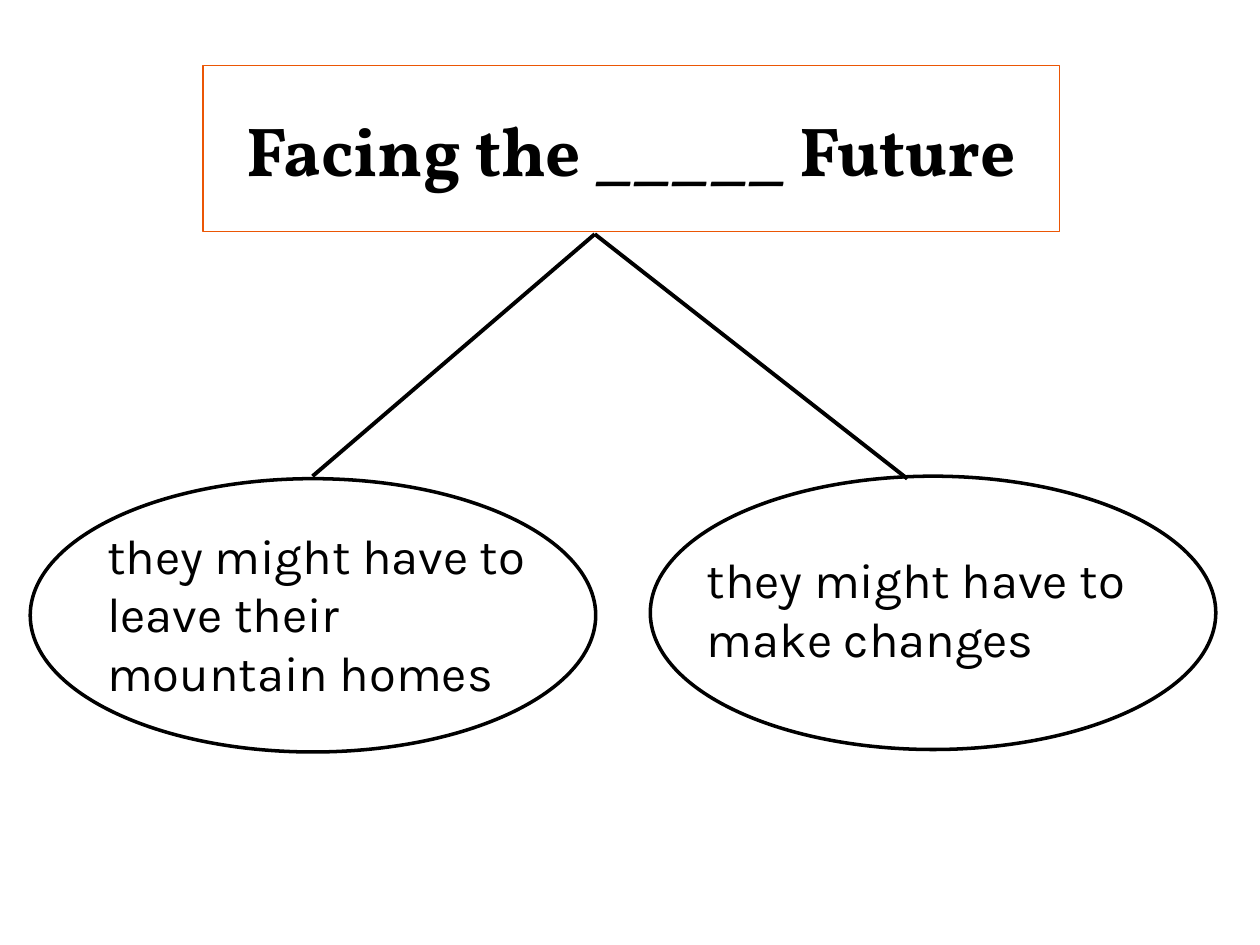
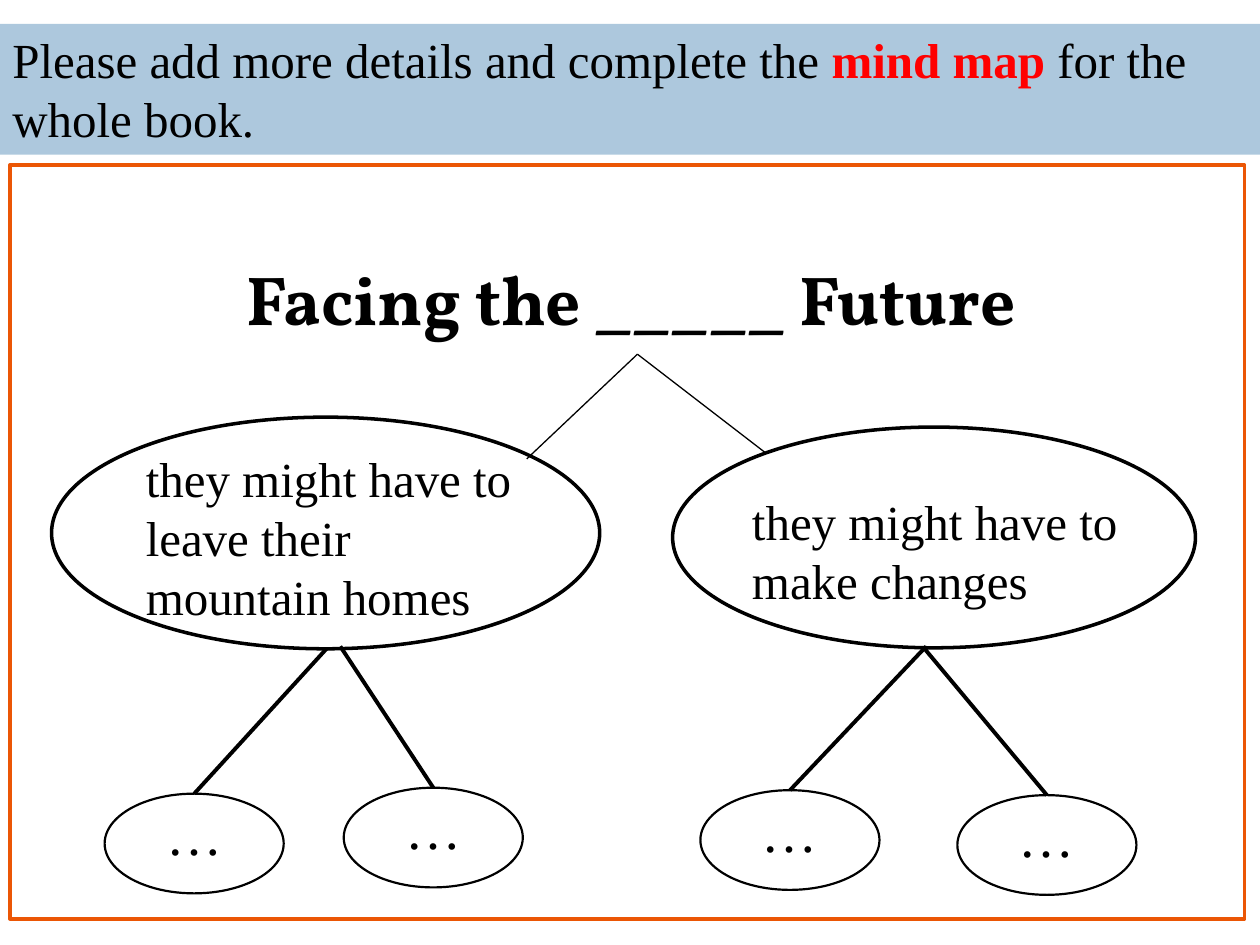
from pptx import Presentation
from pptx.dml.color import RGBColor
from pptx.enum.shapes import MSO_CONNECTOR, MSO_SHAPE
from pptx.enum.text import MSO_ANCHOR, MSO_AUTO_SIZE, PP_ALIGN
from pptx.oxml.ns import qn
from pptx.util import Cm, Pt
from lxml.etree import SubElement

# Shared look
BLACK, RED, ORANGE, BLUE = "000000", "FF0000", "EB5605", "ADC8DD"
SERIF, SANS, HEAD = "Times New Roman", "Karla", "Vollkorn"

# Content; all places are in cm
TITLE = "Facing the _____ Future"
IDEAS = ("they might have to leave their mountain homes",
         "they might have to make changes")
TASK = [("Please add more details and complete the ", BLACK, False),
        ("mind map ", RED, True),
        ("for the whole book.", BLACK, False)]

# Idea maps: oval boxes, text boxes, root point, line ends
FIRST = {
    "top": 1.32, "font": SANS, "line": 2.25, "root": (11.99, 4.72),
    "ovals": [(0.61, 9.65, 11.4, 5.51), (13.11, 9.6, 11.4, 5.51)],
    "texts": [(1.91, 10.46, 9.6, 3.84), (14, 10.95, 9.6, 2.64)],
    "ends": [(6.3, 9.6), (18.29, 9.65)],
}
SECOND = {
    "top": 4.32, "font": SERIF, "line": 0.75, "root": (12.85, 7.14),
    "ovals": [(1.04, 8.41, 11.05, 4.67), (13.56, 8.61, 10.54, 4.45)],
    "texts": [(2.69, 8.92, 8.53, 3.84), (14.91, 9.78, 9.6, 2.64)],
    "ends": [(10.62, 9.25), (15.42, 9.12)],
}

# Detail ovals: left, top and the start of the line that leads there
LEAVES = [(2.11, 16, (6.58, 13.08)), (6.93, 15.88, (6.86, 13.03)),
          (14.12, 15.93, (18.67, 13.03)), (19.3, 16.03, (18.64, 13.08))]
LEAF = (3.61, 2.01)
INDENT = 0.99


def tint(code):
    return RGBColor.from_string(code)


def style(run, font, size, color=BLACK, bold=False):
    run.font.name, run.font.size, run.font.bold = font, Pt(size), bold
    run.font.color.rgb = tint(color)


def shape(slide, kind, box, line=None, width=1, fill=None):
    item = slide.shapes.add_shape(kind, *map(Cm, box))
    item.shadow.inherit = False
    if fill:
        item.fill.solid()
        item.fill.fore_color.rgb = tint(fill)
    else:
        item.fill.background()
    if line:
        item.line.color.rgb = tint(line)
        item.line.width = Pt(width)
    else:
        item.line.fill.background()
    return item


def write(slide, box, text, font, size):
    frame = slide.shapes.add_textbox(*map(Cm, box)).text_frame
    frame.word_wrap = True
    frame.auto_size = MSO_AUTO_SIZE.SHAPE_TO_FIT_TEXT
    frame.text = text
    style(frame.paragraphs[0].runs[0], font, size)


def link(slide, start, end, width):
    line = slide.shapes.add_connector(
        MSO_CONNECTOR.STRAIGHT, *map(Cm, start + end))
    line.line.color.rgb = tint(BLACK)
    line.line.width = Pt(width)
    SubElement(line._element.spPr, qn("a:effectLst"))
    return line


def head(slide, top):
    title = slide.shapes.title
    title.left, title.top, title.width, title.height = map(
        Cm, (4.09, top, 17.27, 3.35))
    frame = title.text_frame
    frame.text = TITLE
    frame.auto_size = MSO_AUTO_SIZE.NONE
    frame.vertical_anchor = MSO_ANCHOR.MIDDLE
    frame.paragraphs[0].alignment = PP_ALIGN.CENTER
    style(frame.paragraphs[0].runs[0], HEAD, 39.6, bold=True)
    return title


def ideas(slide, plan):
    for end in plan["ends"]:
        link(slide, plan["root"], end, plan["line"])
    for oval in plan["ovals"]:
        shape(slide, MSO_SHAPE.OVAL, oval, BLACK, 2)
    for box, text in zip(plan["texts"], IDEAS):
        write(slide, box, text, plan["font"], 28)


def task(slide):
    band = shape(slide, MSO_SHAPE.RECTANGLE, (0, 0.48, 25.4, 2.64), fill=BLUE)
    frame = band.text_frame
    frame.word_wrap = True
    frame.auto_size = MSO_AUTO_SIZE.SHAPE_TO_FIT_TEXT
    frame.vertical_anchor = MSO_ANCHOR.TOP
    line = frame.paragraphs[0]
    line.alignment = PP_ALIGN.LEFT
    for text, color, bold in TASK:
        run = line.add_run()
        run.text = text
        style(run, SERIF, 28, color, bold)


def leaves(slide):
    for left, top, start in LEAVES:
        oval = shape(slide, MSO_SHAPE.OVAL, (left, top) + LEAF, BLACK, 1.25)
        stem = link(slide, start, (left + LEAF[0] / 2, top), 2.25)
        stem.end_connect(oval, 0)
        write(slide, (left + INDENT, top, 3, 1.63), "…", SERIF, 32)


def main():
    deck = Presentation()
    deck.slide_width, deck.slide_height = Cm(25.4), Cm(19.05)
    layout = deck.slide_layouts.get_by_name("Title Only")

    # Slide 1: the two main ideas
    slide = deck.slides.add_slide(layout)
    title = head(slide, FIRST["top"])
    title.line.color.rgb = tint(ORANGE)
    title.line.width = Pt(0.75)
    ideas(slide, FIRST)

    # Slide 2: the task and the map to complete
    slide = deck.slides.add_slide(layout)
    head(slide, SECOND["top"])
    ideas(slide, SECOND)
    shape(slide, MSO_SHAPE.RECTANGLE, (0.2, 3.33, 24.89, 15.19), ORANGE, 2.25)
    task(slide)
    leaves(slide)

    deck.save("out.pptx")


if __name__ == "__main__":
    main()
